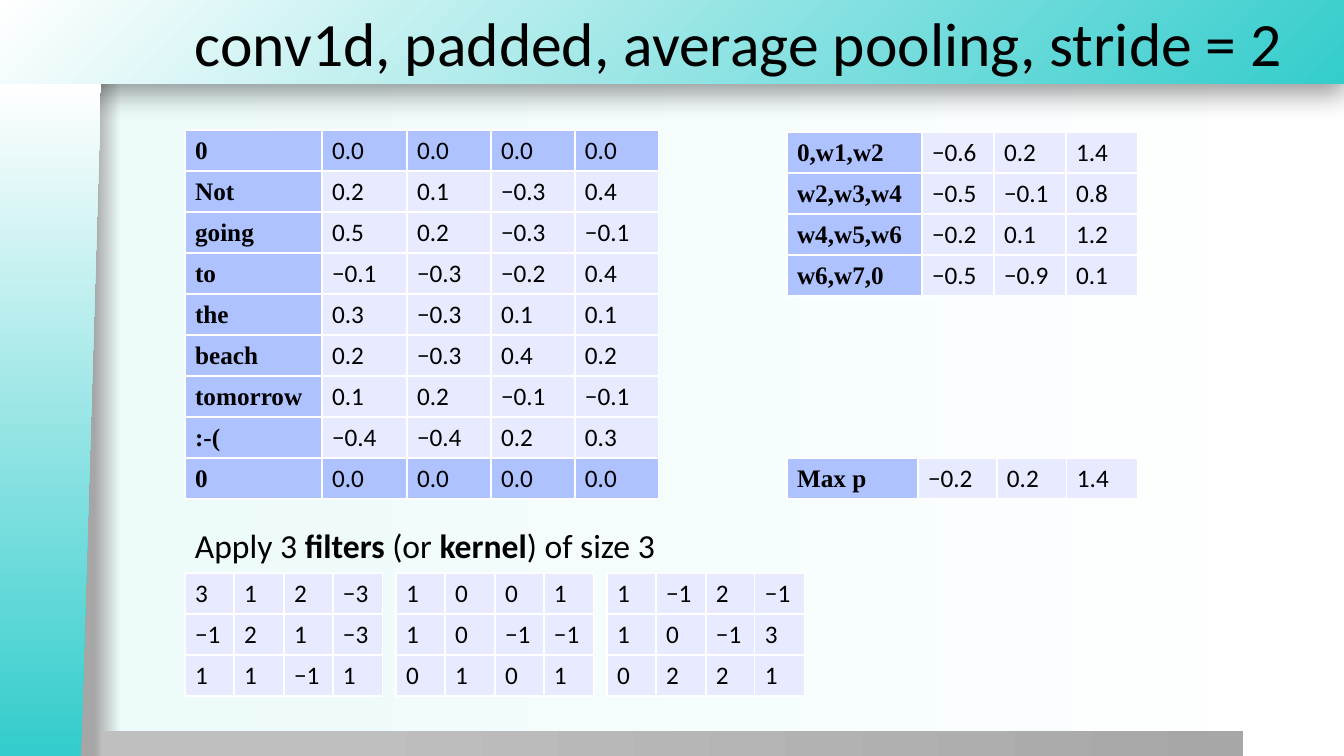
from lxml import etree
from pptx import Presentation
from pptx import util as u
from pptx.dml.color import RGBColor
from pptx.enum import shapes, text
from pptx.oxml import parse_xml
from pptx.oxml.ns import nsdecls, qn

PX = 914400 / 100.8
COLOURS = {
    "teal": "34CCCC", "white": "FFFFFF", "black": "000000", "edge": "A6A6A6",
    "mist": "EDFBFB", "silver": "BFBFBF", "grey": "A7A7A7",
    "label": "ADC2FF", "value": "E8EAFF",
}


def px(length):
    return u.Emu(round(length * PX))


class SlideBuilder:
    body_font = "Calibri"
    label_font = "Times New Roman"
    cell_size = 18
    row_height = 41

    def __init__(self, presentation):
        self.slide = presentation.slides.add_slide(presentation.slide_layouts[6])

    def gradient(self, fill, owner, stops, radial=False):
        """Stops are (percent, colour name); radial ones centre on the lower right corner."""
        fill.gradient()
        stop_xml = "".join(
            f'<a:gs pos="{percent * 1000}"><a:srgbClr val="{COLOURS[name]}"/></a:gs>'
            for percent, name in stops)
        direction = ('<a:path path="circle"><a:fillToRect l="100000" t="100000"/></a:path>'
                     if radial else '<a:lin ang="0" scaled="0"/>')
        default = owner.find(".//" + qn("a:gradFill"))
        default.getparent().replace(default, parse_xml(
            f'<a:gradFill {nsdecls("a")} rotWithShape="1"><a:gsLst>{stop_xml}</a:gsLst>'
            f'{direction}</a:gradFill>'))

    def background(self, stops):
        self.gradient(self.slide.background.fill, self.slide.element, stops)

    def panel(self, kind, left, top, width, height, stops, radial=False):
        shape = self.slide.shapes.add_shape(kind, px(left), px(top), px(width), px(height))
        shape.shadow.inherit = False
        shape.line.fill.background()
        self.gradient(shape.fill, shape.element.spPr, stops, radial)
        return shape

    def drop_shadow(self, shape, blur, distance, opacity):
        effects = shape.element.spPr.find(qn("a:effectLst"))
        effects.append(parse_xml(
            f'<a:outerShdw {nsdecls("a")} blurRad="{u.Pt(blur)}" dist="{u.Pt(distance)}" '
            f'dir="5400000" algn="t" rotWithShape="0"><a:srgbClr val="{COLOURS["black"]}">'
            f'<a:alpha val="{opacity * 1000}"/></a:srgbClr></a:outerShdw>'))

    def run(self, paragraph, words, size, bold=False, font=None):
        run = paragraph.add_run()
        run.text = words
        run.font.size = u.Pt(size)
        run.font.bold = bold
        run.font.name = font or self.body_font
        run.font.color.rgb = RGBColor.from_string(COLOURS["black"])

    def text(self, left, top, width, height, runs, size, wrap=True):
        frame = self.slide.shapes.add_textbox(
            px(left), px(top), px(width), px(height)).text_frame
        frame.word_wrap = wrap
        if wrap:
            frame.vertical_anchor = text.MSO_ANCHOR.MIDDLE
        else:
            frame.auto_size = text.MSO_AUTO_SIZE.SHAPE_TO_FIT_TEXT
        for words, bold in runs:
            self.run(frame.paragraphs[0], words, size, bold)

    def border(self, cell):
        properties = cell._tc.get_or_add_tcPr()
        for side in ("lnL", "lnR", "lnT", "lnB"):
            line = etree.SubElement(properties, qn("a:" + side), w=str(u.Pt(1)))
            solid = etree.SubElement(line, qn("a:solidFill"))
            etree.SubElement(solid, qn("a:srgbClr"), val=COLOURS["white"])

    def table(self, left, top, columns, rows, labelled=True):
        """Rows are strings with | between cells; rows labelled 0 are padding."""
        table = self.slide.shapes.add_table(
            len(rows), len(columns), px(left), px(top),
            px(sum(columns)), px(self.row_height * len(rows))).table
        table.first_row = table.horz_banding = False
        for column, width in zip(table.columns, columns):
            column.width = px(width)
        for row, line in zip(table.rows, rows):
            row.height = px(self.row_height)
            values = line.split("|")
            for index, (cell, value) in enumerate(zip(row.cells, values)):
                is_label = labelled and index == 0
                shaded = is_label or (labelled and values[0] == "0")
                self.border(cell)
                cell.fill.solid()
                cell.fill.fore_color.rgb = RGBColor.from_string(
                    COLOURS["label" if shaded else "value"])
                cell.vertical_anchor = text.MSO_ANCHOR.MIDDLE
                self.run(cell.text_frame.paragraphs[0], value, self.cell_size, is_label,
                         self.label_font if is_label else self.body_font)


PADDING = "0|0.0|0.0|0.0|0.0"
WORD_VECTORS = [
    PADDING,
    "Not|0.2|0.1|−0.3|0.4",
    "going|0.5|0.2|−0.3|−0.1",
    "to|−0.1|−0.3|−0.2|0.4",
    "the|0.3|−0.3|0.1|0.1",
    "beach|0.2|−0.3|0.4|0.2",
    "tomorrow|0.1|0.2|−0.1|−0.1",
    ":-(|−0.4|−0.4|0.2|0.3",
    PADDING,
]
CONVOLUTIONS = [
    "0,w1,w2|−0.6|0.2|1.4",
    "w2,w3,w4|−0.5|−0.1|0.8",
    "w4,w5,w6|−0.2|0.1|1.2",
    "w6,w7,0|−0.5|−0.9|0.1",
]
FILTERS = [
    ["3|1|2|−3", "−1|2|1|−3", "1|1|−1|1"],
    ["1|0|0|1", "1|0|−1|−1", "0|1|0|1"],
    ["1|−1|2|−1", "1|0|−1|3", "0|2|2|1"],
]
LEFT, RIGHT = 185, 787
FILTER_STEP = 211


def main():
    presentation = Presentation()
    presentation.slide_width, presentation.slide_height = px(1344), px(756)
    builder = SlideBuilder(presentation)
    rectangle = shapes.MSO_SHAPE.RECTANGLE

    # Backdrop
    builder.background([(7, "edge"), (9, "mist"), (100, "white")])
    title_bar = builder.panel(rectangle, -1, 0, 1345, 84,
                              [(0, "teal"), (100, "white")], radial=True)
    builder.drop_shadow(title_bar, blur=20, distance=6, opacity=40)
    builder.panel(rectangle, 101, 731, 1142, 26, [(20, "silver"), (100, "grey")])
    sidebar = builder.panel(shapes.MSO_SHAPE.FLOWCHART_MANUAL_INPUT, -286, 370, 673, 101,
                            [(1, "teal"), (100, "white")])
    sidebar.rotation = 270
    sidebar.element.spPr.xfrm.set("flipV", "1")

    # Title
    builder.text(LEFT, 0, 1159, 84,
                 [("conv1d, padded, average pooling, stride = 2", False)], 44)

    # Input words, convolution results and pooled row
    builder.table(LEFT, 130, [137, 85, 84, 84, 84], WORD_VECTORS)
    builder.table(RIGHT, 132, [135, 72, 72, 72], CONVOLUTIONS)
    builder.table(RIGHT, 458, [131, 79, 70, 71], ["Max p|−0.2|0.2|1.4"])

    # Filters
    builder.text(LEFT, 520, 492, 50,
                 [("Apply 3 ", False), ("filters ", True), ("(or ", False),
                  ("kernel", True), (") of size 3", False)], 24, wrap=False)
    for index, weights in enumerate(FILTERS):
        builder.table(LEFT + index * FILTER_STEP, 573, [49, 50, 49, 50], weights,
                      labelled=False)

    presentation.save("out.pptx")


if __name__ == "__main__":
    main()
